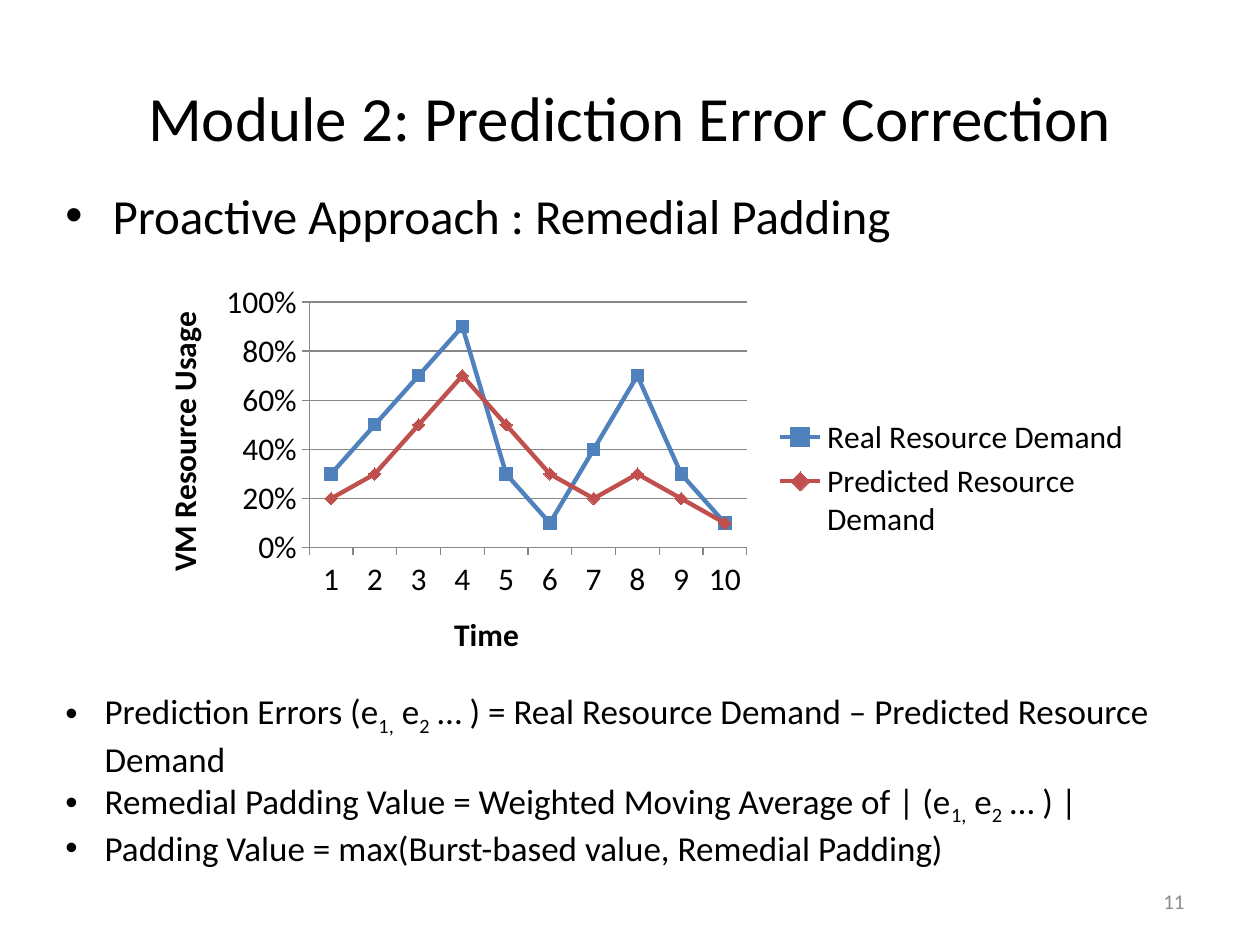
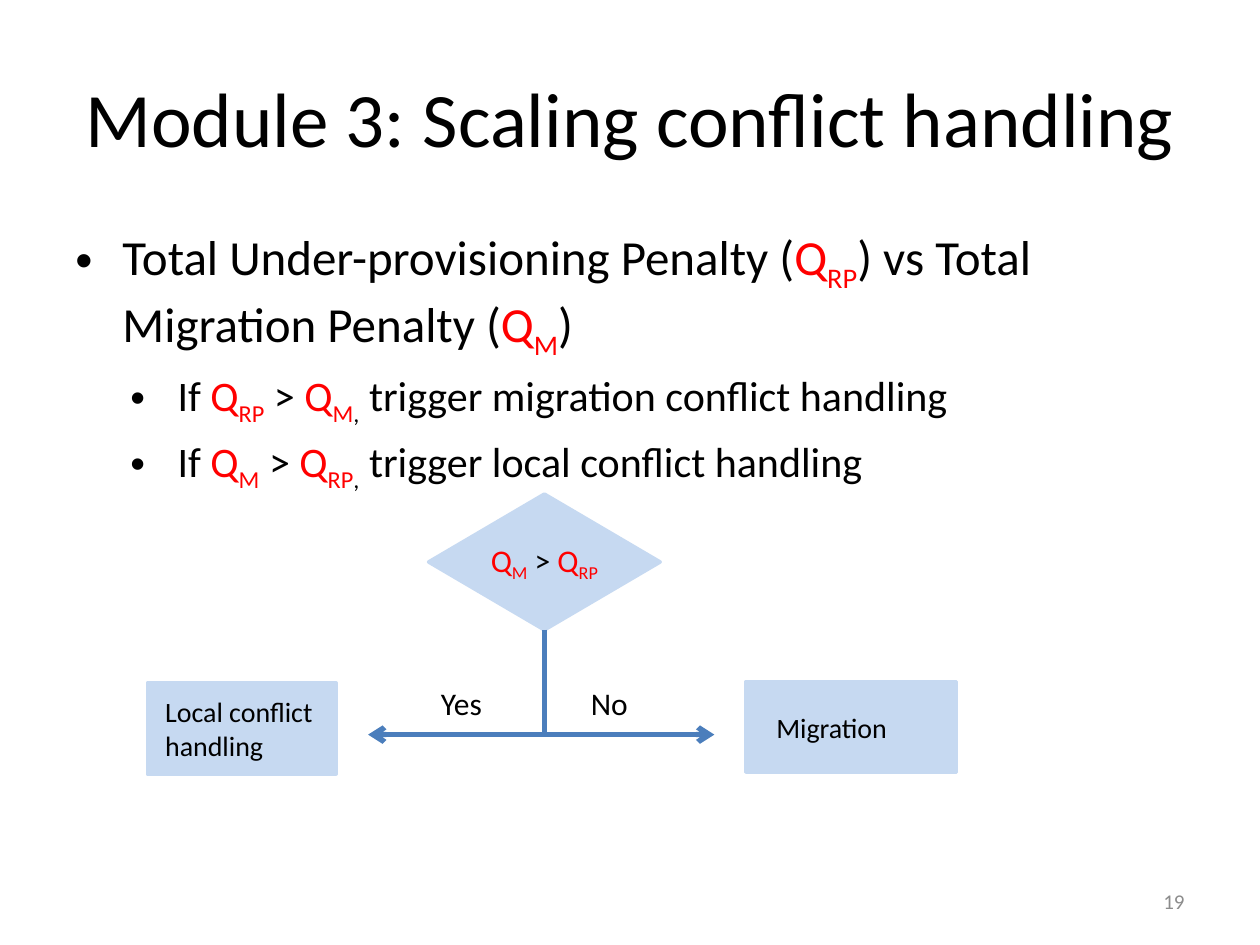
from dataclasses import dataclass
from typing import NamedTuple

from lxml import etree
from pptx import Presentation
from pptx.chart.data import CategoryChartData
from pptx.dml.color import RGBColor
from pptx.enum.chart import XL_CHART_TYPE, XL_LEGEND_POSITION, XL_MARKER_STYLE, XL_TICK_MARK
from pptx.enum.shapes import MSO_CONNECTOR, MSO_SHAPE
from pptx.enum.text import MSO_ANCHOR, PP_ALIGN
from pptx.oxml.ns import qn
from pptx.util import Cm, Pt

LINE_MARKERS = XL_CHART_TYPE.LINE_MARKERS
LEGEND_RIGHT = XL_LEGEND_POSITION.RIGHT
SQUARE, DIAMOND_MARKER = XL_MARKER_STYLE.SQUARE, XL_MARKER_STYLE.DIAMOND
TICK_OUTSIDE = XL_TICK_MARK.OUTSIDE
ELBOW = MSO_CONNECTOR.ELBOW
DIAMOND, RECTANGLE = MSO_SHAPE.DIAMOND, MSO_SHAPE.RECTANGLE
TOP, MIDDLE = MSO_ANCHOR.TOP, MSO_ANCHOR.MIDDLE
LEFT, CENTER, RIGHT = PP_ALIGN.LEFT, PP_ALIGN.CENTER, PP_ALIGN.RIGHT


@dataclass(frozen=True)
class Theme:
    font: str = "Calibri"
    text: RGBColor = RGBColor(0, 0, 0)
    accent: RGBColor = RGBColor(0xFF, 0, 0)
    muted: RGBColor = RGBColor(0x8C, 0x8C, 0x8C)
    node: RGBColor = RGBColor(0xC6, 0xD9, 0xF1)
    arrow: RGBColor = RGBColor(0x4B, 0x7E, 0xBC)
    real: RGBColor = RGBColor(0x4F, 0x81, 0xBD)
    predicted: RGBColor = RGBColor(0xC0, 0x50, 0x4D)
    grid: RGBColor = RGBColor(0x86, 0x86, 0x86)
    long_title: int = 36
    title: int = 44
    body: int = 28
    sub_body: int = 24
    note: int = 20
    label: int = 18
    node_label: int = 16
    footer: int = 12


THEME = Theme()


class Box(NamedTuple):
    """Position and size in centimetres."""
    left: float
    top: float
    width: float
    height: float

    def inner(self, left, top, width, height):
        return Box(self.left + left, self.top + top, width, height)

    def lengths(self):
        return [Cm(value) for value in self]


class Piece(NamedTuple):
    text: str
    color: RGBColor = THEME.text
    subscript: bool = False


TITLE_BOX = Box(1.27, 0.76, 22.86, 3.18)
NUMBER_BOX = Box(18.21, 17.65, 5.92, 1.02)

Q_M = [Piece("Q", THEME.accent), Piece("M", THEME.accent, True)]
Q_RP = [Piece("Q", THEME.accent), Piece("RP", THEME.accent, True)]
ERRORS = [Piece("1,", subscript=True), Piece(" e"), Piece("2", subscript=True)]
COMMA = Piece(",", subscript=True)


def fill_paragraph(paragraph, pieces, size, align=LEFT):
    paragraph.alignment = align
    for piece in pieces:
        run = paragraph.add_run()
        run.text = piece.text
        run.font.name = THEME.font
        run.font.size = Pt(size)
        run.font.color.rgb = piece.color
        if piece.subscript:
            run.font._element.set("baseline", "-25000")


def add_bullet(paragraph, margin, hanging):
    properties = paragraph._p.get_or_add_pPr()
    properties.set("marL", str(Cm(margin)))
    properties.set("indent", str(-Cm(hanging)))
    etree.SubElement(properties, qn("a:buFont")).set("typeface", "Arial")
    etree.SubElement(properties, qn("a:buChar")).set("char", "•")


def add_text_frame(slide, box, anchor=TOP):
    frame = slide.shapes.add_textbox(*box.lengths()).text_frame
    frame.word_wrap = True
    frame.vertical_anchor = anchor
    return frame


def add_label(slide, box, text, size, align=LEFT, anchor=TOP, color=THEME.text):
    frame = add_text_frame(slide, box, anchor)
    fill_paragraph(frame.paragraphs[0], [Piece(text, color)], size, align)


def add_bullets(slide, box, items, levels):
    """Items are (level, pieces); levels hold (size, margin, hanging, space before)."""
    frame = add_text_frame(slide, box)
    for index, (level, pieces) in enumerate(items):
        size, margin, hanging, space = levels[level]
        paragraph = frame.paragraphs[0] if index == 0 else frame.add_paragraph()
        paragraph.level = level
        if index and space:
            paragraph.space_before = Pt(space)
        add_bullet(paragraph, margin, hanging)
        fill_paragraph(paragraph, pieces, size)


def add_base_slide(presentation, title, title_size, number):
    slide = presentation.slides.add_slide(presentation.slide_layouts[6])
    add_label(slide, TITLE_BOX, title, title_size, CENTER, MIDDLE)
    add_label(slide, NUMBER_BOX, number, THEME.footer, RIGHT, MIDDLE, THEME.muted)
    return slide


def set_layout(parent, index, **values):
    """Fix a chart part at fractions of the chart's size."""
    for old in parent.findall(qn("c:layout")):
        parent.remove(old)
    layout = etree.Element(qn("c:layout"))
    parent.insert(index, layout)
    manual = etree.SubElement(layout, qn("c:manualLayout"))
    for name, value in values.items():
        etree.SubElement(manual, qn(f"c:{name}")).set("val", str(value))


def style_axis(axis, title):
    axis.major_tick_mark = TICK_OUTSIDE
    axis.format.line.color.rgb = THEME.grid
    frame = axis.axis_title.text_frame
    fill_paragraph(frame.paragraphs[0], [Piece(title)], THEME.label, CENTER)
    frame.paragraphs[0].runs[0].font.bold = True
    return frame


def add_demand_chart(slide, box):
    data = CategoryChartData(number_format="0%")
    data.categories = [str(time) for time in range(1, 11)]
    data.add_series("Real Resource Demand", [0.3, 0.5, 0.7, 0.9, 0.3, 0.1, 0.4, 0.7, 0.3, 0.1])
    data.add_series("Predicted Resource Demand", [0.2, 0.3, 0.5, 0.7, 0.5, 0.3, 0.2, 0.3, 0.2, 0.1])
    chart = slide.shapes.add_chart(LINE_MARKERS, *box.lengths(), data).chart
    chart.has_title = False
    chart.font.name = THEME.font
    chart.font.size = Pt(THEME.label)
    chart.font.color.rgb = THEME.text
    chart.has_legend = True
    chart.legend.position = LEGEND_RIGHT
    chart.legend.include_in_layout = False

    style_axis(chart.category_axis, "Time")
    usage = chart.value_axis
    usage.minimum_scale, usage.maximum_scale, usage.major_unit = 0, 1, 0.2
    usage.major_gridlines.format.line.color.rgb = THEME.grid
    usage.tick_labels.number_format = "0%"
    usage.tick_labels.number_format_is_linked = False
    frame = style_axis(usage, "VM Resource Usage")
    frame._txBody.bodyPr.set("rot", "-5400000")
    frame._txBody.bodyPr.set("vert", "horz")
    set_layout(usage.axis_title._element, 1, xMode="edge", yMode="edge", x=0.03, y=0.08)
    set_layout(chart._chartSpace.find(f".//{qn('c:plotArea')}"), 0, layoutTarget="inner",
               xMode="edge", yMode="edge", x=0.18, y=0.07, w=0.43, h=0.6)

    plot = chart.plots[0]
    plot.vary_by_categories = False
    styles = [(THEME.real, SQUARE), (THEME.predicted, DIAMOND_MARKER)]
    for series, (color, marker) in zip(plot.series, styles):
        series.smooth = False
        series.format.line.color.rgb = color
        series.format.line.width = Pt(2.5)
        series.marker.style = marker
        series.marker.size = 7
        series.marker.format.fill.solid()
        series.marker.format.fill.fore_color.rgb = color
        series.marker.format.line.color.rgb = color


def add_node(slide, kind, box, pieces, size, inset=0.0, align=LEFT, wrap=True):
    node = slide.shapes.add_shape(kind, *box.lengths())
    node.shadow.inherit = False
    node.fill.solid()
    node.fill.fore_color.rgb = THEME.node
    node.line.color.rgb = THEME.node
    node.line.width = Pt(2)
    frame = node.text_frame
    frame.margin_left, frame.margin_right = Cm(inset), 0
    frame.word_wrap = wrap
    frame.vertical_anchor = MIDDLE
    fill_paragraph(frame.paragraphs[0], pieces, size, align)


def add_branch(slide, start, end):
    """Draw an arrow that runs down from start, then sideways to end."""
    (start_x, start_y), (end_x, end_y) = start, end
    drop, reach = end_y - start_y, abs(end_x - start_x)
    center_x, center_y = (start_x + end_x) / 2, (start_y + end_y) / 2
    side = 1 if end_x > start_x else -1
    # The preset runs sideways first, so its box is laid out turned by a quarter.
    branch = slide.shapes.add_connector(
        ELBOW, Cm(center_x + side * drop / 2), Cm(center_y - reach / 2),
        Cm(center_x - side * drop / 2), Cm(center_y + reach / 2))
    branch.line.color.rgb = THEME.arrow
    branch.line.width = Pt(3)
    properties = branch._element.spPr
    properties.find(qn("a:xfrm")).set("rot", str((180 + side * 90) * 60000))
    properties.find(qn("a:prstGeom")).set("prst", "bentConnector2")
    etree.SubElement(properties.find(qn("a:ln")), qn("a:tailEnd")).set("type", "arrow")
    etree.SubElement(properties, qn("a:effectLst"))


def add_decision_flow(slide, box):
    decision = box.inner(5.67, 0, 4.67, 2.74)
    add_node(slide, DIAMOND, decision, [*Q_M, Piece(" > "), *Q_RP],
             THEME.label, align=CENTER, wrap=False)
    fork = (decision.left + decision.width / 2, decision.top + decision.height)
    for end in (4.45, 11.43):
        add_branch(slide, fork, (box.left + end, box.top + 4.85))
    for text, left in (("Yes", 5.67), ("No", 8.69)):
        add_label(slide, box.inner(left, 3.71, 1.7, 1.02), text, THEME.label)
    outcomes = [("Local conflict handling", box.inner(0, 3.81, 3.81, 1.83), 0.36),
                ("Migration", box.inner(12.07, 3.78, 4.24, 1.83), 0.61)]
    for text, place, inset in outcomes:
        add_node(slide, RECTANGLE, place, [Piece(text)], THEME.node_label, inset)


def build_error_correction(presentation):
    slide = add_base_slide(presentation, "Module 2: Prediction Error Correction",
                           THEME.long_title, "11")
    add_bullets(slide, Box(1.07, 3.61, 23.06, 2.11),
                [(0, [Piece("Proactive Approach : Remedial Padding")])],
                [(THEME.body, 0.95, 0.95, 0)])
    add_demand_chart(slide, Box(2.54, 5.51, 20.52, 8.26))
    notes = [
        [Piece("Prediction Errors (e"), *ERRORS,
         Piece(" … ) = Real Resource Demand – Predicted Resource Demand")],
        [Piece("Remedial Padding Value = Weighted Moving Average of | (e"), *ERRORS,
         Piece(" … ) |")],
        [Piece("Padding Value = max(Burst-based value, Remedial Padding)")],
    ]
    add_bullets(slide, Box(1.07, 13.77, 23.5, 3.68), [(0, note) for note in notes],
                [(THEME.note, 0.79, 0.79, 0)])


def build_conflict_handling(presentation):
    slide = add_base_slide(presentation, "Module 3: Scaling conflict handling",
                           THEME.title, "19")
    items = [(0, [Piece("Total Under-provisioning Penalty ("), *Q_RP,
                  Piece(") vs Total Migration Penalty ("), *Q_M, Piece(")")])]
    for larger, smaller, action in ((Q_RP, Q_M, "migration"), (Q_M, Q_RP, "local")):
        items.append((1, [Piece("If "), *larger, Piece(" > "), *smaller, COMMA,
                          Piece(f" trigger {action} conflict handling")]))
    add_bullets(slide, Box(1.27, 4.45, 22.86, 12.57), items,
                [(THEME.body, 0.95, 0.95, 0), (THEME.sub_body, 2.06, 0.95, 5)])
    add_decision_flow(slide, Box(2.97, 9.96, 16.31, 5.64))


def main():
    presentation = Presentation()
    presentation.slide_width, presentation.slide_height = Cm(25.4), Cm(19.05)
    build_error_correction(presentation)
    build_conflict_handling(presentation)
    presentation.save("out.pptx")


if __name__ == "__main__":
    main()
